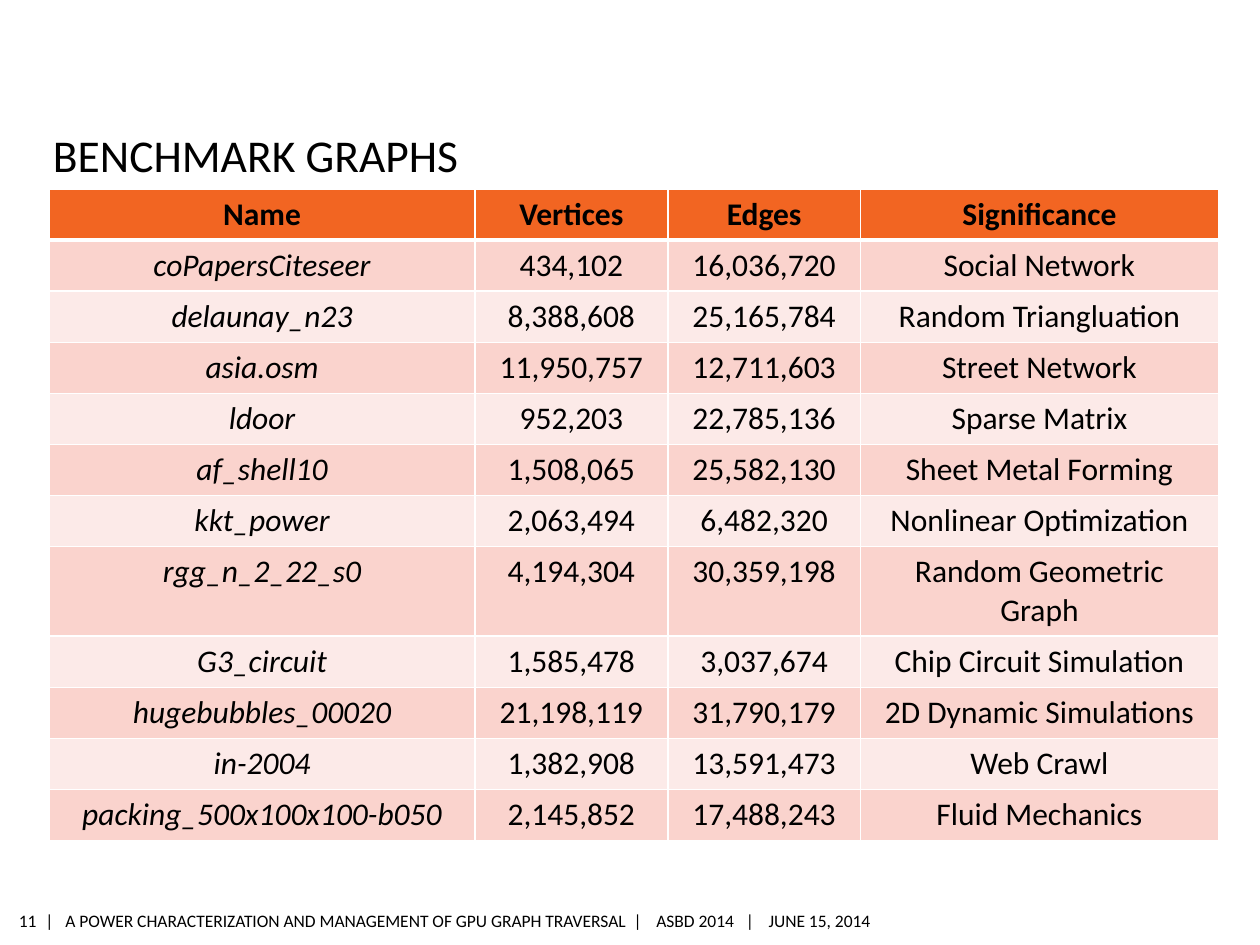
"""Build the benchmark graphs slide: a title, a table of graphs and a footer."""
from typing import NamedTuple

from lxml import etree
from pptx import Presentation, util as u
from pptx.dml.color import RGBColor
from pptx.enum import text
from pptx.oxml import ns

COLOURS = {"text": "000000", "header": "F26522", "odd": "FAD3CD", "even": "FCEAE8", "border": "FFFFFF"}
FONT = "Calibri"
SLIDE_WIDTH, SLIDE_HEIGHT = u.Inches(10), u.Inches(7.5)
COLUMN_WIDTHS = (3.38, 1.53, 1.53, 2.84)
ROW_HEIGHT = u.Pt(29.2)
FOOTER_TABS = (0.16, 4.67, 4.85, 5.56, 5.74)
FOOTER_PARTS = ("|", "A POWER CHARACTERIZATION AND MANAGEMENT OF GPU GRAPH TRAVERSAL",
                "|", "ASBD 2014", "|", "JUNE 15, 2014")


class Graph(NamedTuple):
    """One row of the benchmark table."""
    name: str
    vertices: str
    edges: str
    significance: str


class Box(NamedTuple):
    """A rectangle in inches."""
    left: float
    top: float
    width: float
    height: float


HEADER = Graph("Name", "Vertices", "Edges", "Significance")
GRAPHS = (
    Graph("coPapersCiteseer", "434,102", "16,036,720", "Social Network"),
    Graph("delaunay_n23", "8,388,608", "25,165,784", "Random Triangluation"),
    Graph("asia.osm", "11,950,757", "12,711,603", "Street Network"),
    Graph("ldoor", "952,203", "22,785,136", "Sparse Matrix"),
    Graph("af_shell10", "1,508,065", "25,582,130", "Sheet Metal Forming"),
    Graph("kkt_power", "2,063,494", "6,482,320", "Nonlinear Optimization"),
    Graph("rgg_n_2_22_s0", "4,194,304", "30,359,198", "Random Geometric Graph"),
    Graph("G3_circuit", "1,585,478", "3,037,674", "Chip Circuit Simulation"),
    Graph("hugebubbles_00020", "21,198,119", "31,790,179", "2D Dynamic Simulations"),
    Graph("in-2004", "1,382,908", "13,591,473", "Web Crawl"),
    Graph("packing_500x100x100-b050", "2,145,852", "17,488,243", "Fluid Mechanics"),
)


def add_run(paragraph, words: str, size: float, bold: bool = False, italic: bool = False) -> None:
    """Add one formatted run to a paragraph."""
    run = paragraph.add_run()
    run.text = words
    run.font.name, run.font.size = FONT, u.Pt(size)
    run.font.bold, run.font.italic = bold, italic
    run.font.color.rgb = RGBColor.from_string(COLOURS["text"])


def place(shape, box: Box) -> None:
    """Move and size a shape."""
    shape.left, shape.top, shape.width, shape.height = map(u.Inches, box)


def set_frame(frame, anchor, top: float, bottom: float, wrap: bool = True) -> None:
    """Set the anchor, vertical insets and wrapping of a text frame."""
    frame.vertical_anchor, frame.word_wrap = anchor, wrap
    frame.auto_size = text.MSO_AUTO_SIZE.NONE
    frame.margin_left = frame.margin_right = 0
    frame.margin_top, frame.margin_bottom = u.Inches(top), u.Inches(bottom)


def set_borders(cell, top: float, bottom: float) -> None:
    """Draw the four cell borders, with widths in points."""
    properties = cell._tc.get_or_add_tcPr()
    widths = {"a:lnL": 1, "a:lnR": 1, "a:lnT": top, "a:lnB": bottom}
    for position, (tag, width) in enumerate(widths.items()):
        line = etree.Element(ns.qn(tag), w=str(u.Pt(width)))
        fill = etree.SubElement(line, ns.qn("a:solidFill"))
        etree.SubElement(fill, ns.qn("a:srgbClr"), val=COLOURS["border"])
        properties.insert(position, line)


def add_title(slide) -> None:
    """Fill the title placeholder."""
    title = slide.shapes.title
    place(title, Box(0.42, 0.92, 8.4, 0.52))
    set_frame(title.text_frame, text.MSO_ANCHOR.BOTTOM, 0.05, 0)
    paragraph = title.text_frame.paragraphs[0]
    paragraph.alignment = text.PP_ALIGN.LEFT
    add_run(paragraph, "BENCHMARK GRAPHS", 26)


def add_graph_table(slide) -> None:
    """Draw the header and one banded row for each graph."""
    rows = (HEADER, *GRAPHS)
    table = slide.shapes.add_table(
        len(rows), len(COLUMN_WIDTHS), u.Inches(0.39), u.Inches(1.5),
        u.Inches(sum(COLUMN_WIDTHS)), ROW_HEIGHT * len(rows)).table
    for column, width in zip(table.columns, COLUMN_WIDTHS):
        column.width = u.Inches(width)
    for row_index, graph in enumerate(rows):
        table.rows[row_index].height = ROW_HEIGHT
        is_header = row_index == 0
        band = "header" if is_header else "odd" if row_index % 2 else "even"
        for column_index, words in enumerate(graph):
            cell = table.cell(row_index, column_index)
            cell.fill.solid()
            cell.fill.fore_color.rgb = RGBColor.from_string(COLOURS[band])
            set_borders(cell, 3 if row_index == 1 else 1, 3 if is_header else 1)
            paragraph = cell.text_frame.paragraphs[0]
            paragraph.alignment = text.PP_ALIGN.CENTER
            add_run(paragraph, words, 18, is_header, not is_header and column_index == 0)


def add_footer_box(slide, box: Box, words: str, alignment, tabs=(), wrap: bool = True) -> None:
    """Add a small footer text with optional tab stops."""
    shape = slide.shapes.add_textbox(*map(u.Inches, box))
    set_frame(shape.text_frame, text.MSO_ANCHOR.MIDDLE, 0.04, 0.04, wrap)
    paragraph = shape.text_frame.paragraphs[0]
    paragraph.alignment = alignment
    if tabs:
        stops = etree.SubElement(paragraph._p.get_or_add_pPr(), ns.qn("a:tabLst"))
        for position in tabs:
            etree.SubElement(stops, ns.qn("a:tab"), pos=str(u.Inches(position)), algn="l")
    add_run(paragraph, words, 10)


def main() -> None:
    """Build and save the slide."""
    presentation = Presentation()
    presentation.slide_width, presentation.slide_height = SLIDE_WIDTH, SLIDE_HEIGHT
    slide = presentation.slides.add_slide(presentation.slide_layouts.get_by_name("Title Only"))
    add_footer_box(slide, Box(0.36, 7.18, 6.7, 0.26), "\t".join(FOOTER_PARTS),
                   text.PP_ALIGN.LEFT, FOOTER_TABS)
    add_footer_box(slide, Box(0.13, 7.18, 0.16, 0.26), "11", text.PP_ALIGN.RIGHT, wrap=False)
    add_title(slide)
    add_graph_table(slide)
    presentation.save("out.pptx")


if __name__ == "__main__":
    main()
